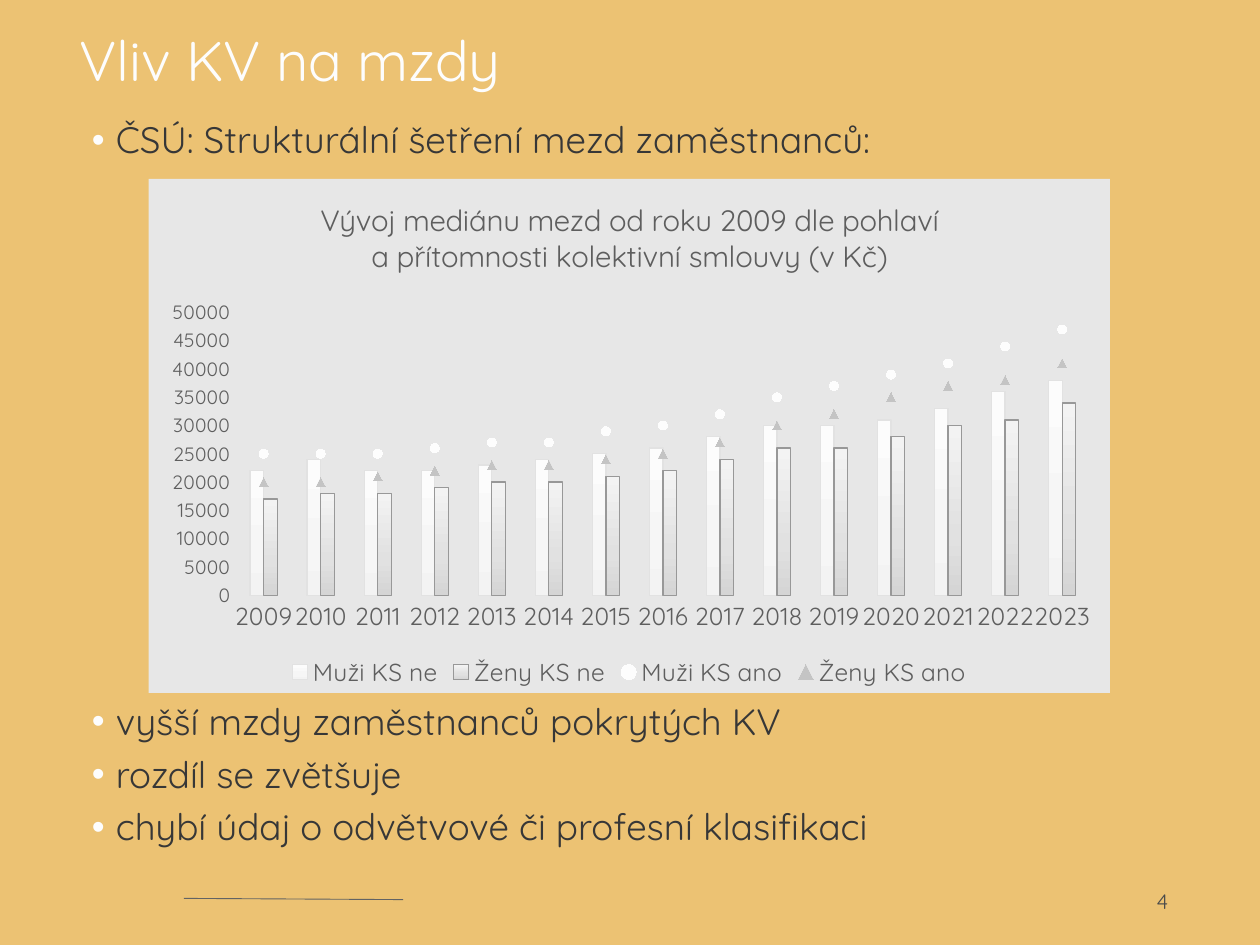
from dataclasses import dataclass
from typing import Optional

from lxml import etree
from pptx import Presentation
from pptx import util as u
from pptx.chart import data as chart_data
from pptx.dml.color import RGBColor
from pptx.enum import chart as charts, shapes, text
from pptx.oxml import parse_xml
from pptx.oxml import ns


@dataclass(frozen=True)
class Theme:
    font: str = "Quicksand"
    background: str = "ECC273"
    white: str = "FDFDFD"
    body: str = "373737"
    number: str = "4B4B4B"
    rule: str = "636363"
    chart_text: str = "5E5E5E"
    chart_fill: str = "E7E7E7"
    title_size: float = 32
    body_size: float = 21
    number_size: float = 12
    chart_title_size: float = 16.8
    label_size: float = 14
    value_size: float = 11


@dataclass(frozen=True)
class Bullet:
    wording: str
    space_before: float


@dataclass(frozen=True)
class WageSeries:
    name: str
    thousands: tuple[int, ...]
    color: str
    gradient: tuple[str, ...] = ()
    marker: Optional[charts.XL_MARKER_STYLE] = None


THEME = Theme()
BULLETS = (
    Bullet("ČSÚ: Strukturální šetření mezd zaměstnanců:", 0),
    Bullet("vyšší mzdy zaměstnanců pokrytých KV", 309.5),
    Bullet("rozdíl se zvětšuje", 7.5),
    Bullet("chybí údaj o odvětvové či profesní klasifikaci", 7.5),
)
CHART_TITLE = (
    "Vývoj mediánu mezd od roku 2009 dle pohlaví",
    "a přítomnosti kolektivní smlouvy (v Kč)",
)
YEARS = [str(year) for year in range(2009, 2024)]
WAGES = (
    WageSeries("Muži KS ne", (22, 24, 22, 22, 23, 24, 25, 26, 28, 30, 30, 31, 33, 36, 38),
               "E2E2E2", gradient=("F3F3F3", "F6F6F6", "FCFCFC")),
    WageSeries("Ženy KS ne", (17, 18, 18, 19, 20, 20, 21, 22, 24, 26, 26, 28, 30, 31, 34),
               "989898", gradient=("D5D5D5", "E1E1E1", "F3F3F3")),
    WageSeries("Muži KS ano", (25, 25, 25, 26, 27, 27, 29, 30, 32, 35, 37, 39, 41, 44, 47),
               "FDFDFD", marker=charts.XL_MARKER_STYLE.CIRCLE),
    WageSeries("Ženy KS ano", (20, 20, 21, 22, 23, 23, 24, 25, 27, 30, 32, 35, 37, 38, 41),
               "C4C4C4", marker=charts.XL_MARKER_STYLE.TRIANGLE),
)


def style_font(font, size: float, color: str) -> None:
    font.name = THEME.font
    font.size = u.Pt(size)
    font.bold = False
    font.color.rgb = RGBColor.from_string(color)


def add_run(paragraph, wording: str, size: float, color: str) -> None:
    run = paragraph.add_run()
    run.text = wording
    style_font(run.font, size, color)


def place(shape, left: float, top: float, width: float, height: float) -> None:
    shape.left, shape.top = u.Inches(left), u.Inches(top)
    shape.width, shape.height = u.Inches(width), u.Inches(height)


def add_title(slide) -> None:
    title = slide.shapes.title
    place(title, 0.63, 0.26, 8.73, 0.64)
    frame = title.text_frame
    frame.auto_size = text.MSO_AUTO_SIZE.NONE
    frame.vertical_anchor = text.MSO_ANCHOR.TOP
    frame.margin_left = frame.margin_top = frame.margin_right = frame.margin_bottom = 0
    paragraph = frame.paragraphs[0]
    paragraph.alignment = text.PP_ALIGN.LEFT
    paragraph.line_spacing = 0.9
    add_run(paragraph, "Vliv KV na mzdy", THEME.title_size, THEME.white)


def add_bullets(slide, bullets: tuple[Bullet, ...]) -> None:
    body = slide.placeholders[1]
    place(body, 0.63, 0.92, 8.74, 6.11)
    frame = body.text_frame
    frame.auto_size = text.MSO_AUTO_SIZE.NONE
    for index, bullet in enumerate(bullets):
        paragraph = frame.add_paragraph() if index else frame.paragraphs[0]
        properties = paragraph._p.get_or_add_pPr()
        properties.set("marL", str(u.Inches(0.19)))
        properties.set("indent", str(u.Inches(-0.19)))
        color = etree.SubElement(properties, ns.qn("a:buClr"))
        etree.SubElement(color, ns.qn("a:srgbClr"), val=THEME.white)
        etree.SubElement(properties, ns.qn("a:buFont"), typeface="Arial")
        etree.SubElement(properties, ns.qn("a:buChar"), char="•")
        paragraph.line_spacing = 0.9
        paragraph.space_before = u.Pt(bullet.space_before)
        add_run(paragraph, bullet.wording, THEME.body_size, THEME.body)


def add_footer(slide) -> None:
    rule = slide.shapes.add_connector(
        shapes.MSO_CONNECTOR.STRAIGHT,
        u.Inches(1.46), u.Inches(7.13), u.Inches(3.2), u.Inches(7.14))
    rule.line.color.rgb = RGBColor.from_string(THEME.rule)
    rule.line.width = u.Pt(0.5)
    etree.SubElement(rule._element.spPr, ns.qn("a:effectLst"))
    number = slide.shapes.add_textbox(
        u.Inches(7.12), u.Inches(6.95), u.Inches(2.25), u.Inches(0.4))
    frame = number.text_frame
    frame.word_wrap = True
    frame.vertical_anchor = text.MSO_ANCHOR.MIDDLE
    frame.paragraphs[0].alignment = text.PP_ALIGN.RIGHT
    add_run(frame.paragraphs[0], "4", THEME.number_size, THEME.number)


def move_to_line_plot(chart, names: set[str]) -> None:
    bar_chart = chart.plots[0]._element
    line_chart = parse_xml(
        f'<c:lineChart {ns.nsdecls("c")}><c:grouping val="standard"/>'
        '<c:varyColors val="0"/><c:marker val="1"/></c:lineChart>')
    marker = line_chart[-1]
    for series in list(chart.plots[0].series):
        if series.name in names:
            element = series._element
            for setting in element.findall(ns.qn("c:invertIfNegative")):
                element.remove(setting)
            marker.addprevious(element)
    for axis_id in bar_chart.findall(ns.qn("c:axId")):
        etree.SubElement(line_chart, ns.qn("c:axId"), val=axis_id.get("val"))
    bar_chart.addnext(line_chart)


def fill_gradient(series, colors: tuple[str, ...]) -> None:
    stops = "".join(
        f'<a:gs pos="{position}"><a:srgbClr val="{color}"/></a:gs>'
        for position, color in zip((0, 35000, 100000), colors))
    series.format.fill.solid()
    properties = series._element.find(ns.qn("c:spPr"))
    solid = properties.find(ns.qn("a:solidFill"))
    properties.replace(solid, parse_xml(
        f'<a:gradFill {ns.nsdecls("a")}><a:gsLst>{stops}</a:gsLst>'
        '<a:lin ang="16200000" scaled="0"/></a:gradFill>'))


def style_series(series, wage: WageSeries) -> None:
    color = RGBColor.from_string(wage.color)
    if wage.marker is None:
        fill_gradient(series, wage.gradient)
        series.format.line.color.rgb = color
        series.format.line.width = u.Pt(0.75)
        return
    series.smooth = False
    series.format.line.fill.background()
    series.marker.style = wage.marker
    series.marker.size = 5
    series.marker.format.fill.solid()
    series.marker.format.fill.fore_color.rgb = color
    series.marker.format.line.fill.background()


def style_axes(chart) -> None:
    quiet = RGBColor.from_string(THEME.chart_fill)
    category, value = chart.category_axis, chart.value_axis
    for axis, size in ((category, THEME.label_size), (value, THEME.value_size)):
        axis.major_tick_mark = axis.minor_tick_mark = charts.XL_TICK_MARK.NONE
        style_font(axis.tick_labels.font, size, THEME.chart_text)
    category._element.find(ns.qn("c:txPr")).find(ns.qn("a:bodyPr")).set("rot", "-60000000")
    value.minimum_scale, value.maximum_scale, value.major_unit = 0, 50000, 5000
    value.tick_labels.number_format = "0"
    value.tick_labels.number_format_is_linked = False
    value.format.line.fill.background()
    for line in (category.format.line, value.major_gridlines.format.line):
        line.color.rgb = quiet
        line.width = u.Pt(0.75)


def set_plot_area(chart, **fractions: float) -> None:
    plot_area = chart._chartSpace.chart.plotArea
    for layout in plot_area.findall(ns.qn("c:layout")):
        plot_area.remove(layout)
    sizes = "".join(f'<c:{key} val="{value}"/>' for key, value in fractions.items())
    plot_area.insert(0, parse_xml(
        f'<c:layout {ns.nsdecls("c")}><c:manualLayout><c:layoutTarget val="inner"/>'
        f'<c:xMode val="edge"/><c:yMode val="edge"/>{sizes}</c:manualLayout></c:layout>'))


def add_wage_chart(slide, wages: tuple[WageSeries, ...]) -> None:
    source = chart_data.CategoryChartData(number_format="0")
    source.categories = YEARS
    for wage in wages:
        source.add_series(wage.name, [value * 1000 for value in wage.thousands])
    chart = slide.shapes.add_chart(
        charts.XL_CHART_TYPE.COLUMN_CLUSTERED, u.Inches(1.18), u.Inches(1.42),
        u.Inches(7.63), u.Inches(4.08), source).chart
    style_font(chart.font, THEME.label_size, THEME.chart_text)
    chart._chartSpace.find(ns.qn("c:txPr")).addprevious(parse_xml(
        f'<c:spPr {ns.nsdecls("c", "a")}><a:solidFill><a:srgbClr val="{THEME.chart_fill}"/>'
        '</a:solidFill><a:ln><a:noFill/></a:ln></c:spPr>'))
    frame = chart.chart_title.text_frame
    for index, wording in enumerate(CHART_TITLE):
        paragraph = frame.add_paragraph() if index else frame.paragraphs[0]
        add_run(paragraph, wording, THEME.chart_title_size, THEME.chart_text)
    chart.chart_title.include_in_layout = False
    chart.plots[0].gap_width = 219
    chart.plots[0].vary_by_categories = False
    move_to_line_plot(chart, {wage.name for wage in wages if wage.marker is not None})
    for series, wage in zip(chart.series, wages):
        style_series(series, wage)
    style_axes(chart)
    set_plot_area(chart, x=0.09, y=0.26, w=0.89, h=0.55)
    chart.has_legend = True
    chart.legend.position = charts.XL_LEGEND_POSITION.BOTTOM
    chart.legend.include_in_layout = False
    style_font(chart.legend.font, THEME.label_size, THEME.chart_text)


def main() -> None:
    presentation = Presentation()
    presentation.slide_width, presentation.slide_height = u.Inches(10), u.Inches(7.5)
    slide = presentation.slides.add_slide(presentation.slide_layouts[1])
    slide.background.fill.solid()
    slide.background.fill.fore_color.rgb = RGBColor.from_string(THEME.background)
    add_footer(slide)
    add_bullets(slide, BULLETS)
    add_title(slide)
    add_wage_chart(slide, WAGES)
    presentation.save("out.pptx")


if __name__ == "__main__":
    main()
